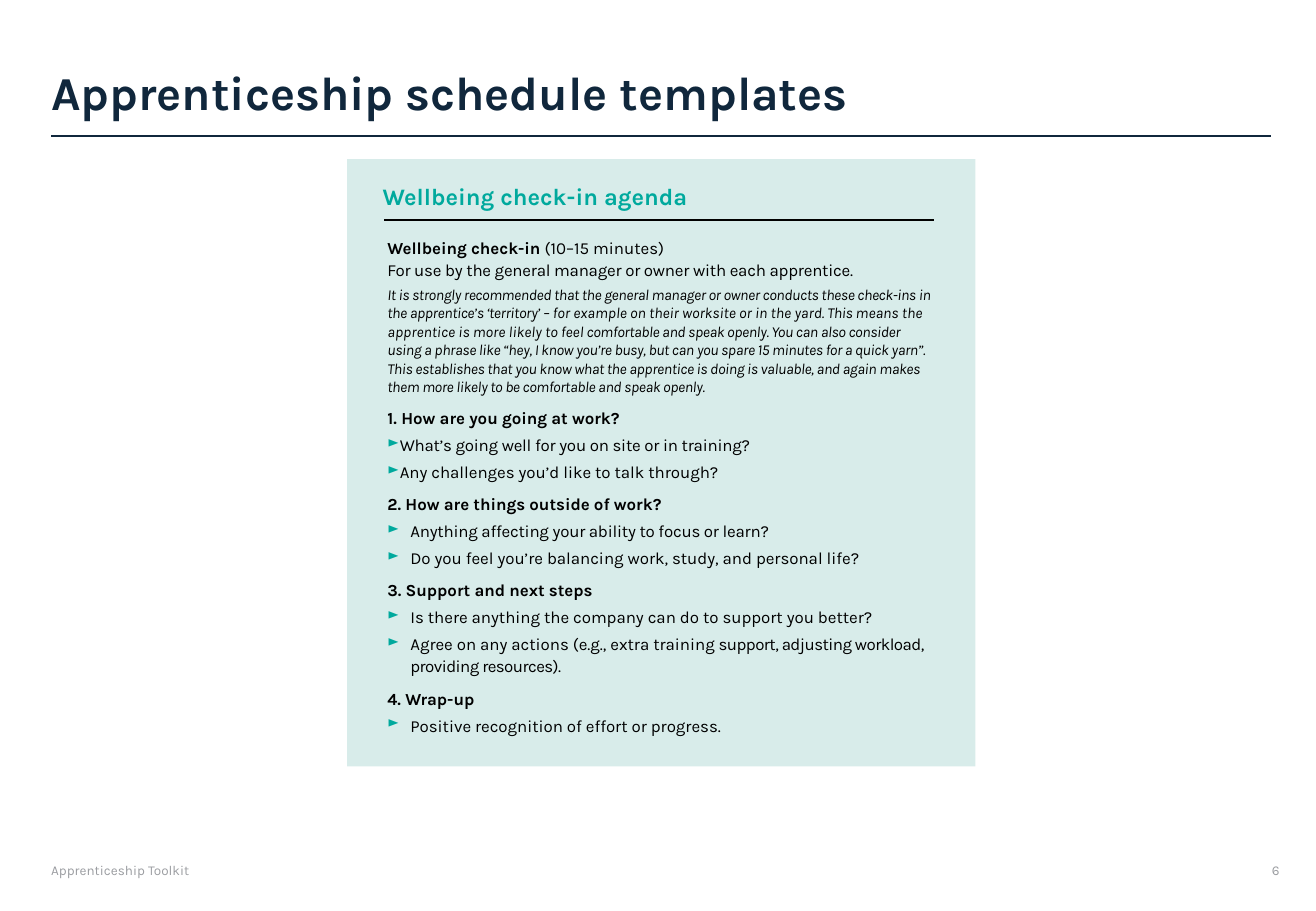
from lxml import etree
from pptx import Presentation
from pptx.dml.color import RGBColor
from pptx.enum import shapes
from pptx.oxml import ns
from pptx.util import Cm, Pt

NAVY = RGBColor(0x10, 0x27, 0x3C)
TEAL = RGBColor(0x00, 0xA9, 0x9D)
MINT = RGBColor(0xD8, 0xEC, 0xEA)
GREY = RGBColor(0x9B, 0x9D, 0xA1)
BLACK = RGBColor(0, 0, 0)

prs = Presentation()
prs.slide_width, prs.slide_height = Cm(27.51), Cm(19.05)
slide = prs.slides.add_slide(prs.slide_layouts[6])


def add_text(parent, box, paragraphs):
    """Each paragraph is (paragraph format, font format, colour, runs of (text, tracking))."""
    tf = parent.add_textbox(*map(Cm, box)).text_frame
    frame = dict(word_wrap=True, margin_left=0, margin_top=0, margin_right=0, margin_bottom=0)
    for name, value in frame.items():
        setattr(tf, name, value)
    for i, (para, font, colour, runs) in enumerate(paragraphs):
        p = tf.add_paragraph() if i else tf.paragraphs[0]
        for name, value in para.items():
            setattr(p, name, value)
        for words, tracking, *extra in runs:
            r = p.add_run()
            r.text = words
            for name, value in {"name": "Karla", **font, **dict(extra)}.items():
                setattr(r.font, name, value)
            r.font.color.rgb = colour
            if tracking:
                r.font._element.set("spc", str(tracking))
    return tf


def add_rule(parent, x1, x2, y, colour):
    ln = parent.add_connector(shapes.MSO_CONNECTOR.STRAIGHT, Cm(x1), Cm(y), Cm(x2), Cm(y))
    ln.line.color.rgb = colour
    ln.line.width = Pt(1)
    etree.SubElement(ln._element.spPr, ns.qn("a:effectLst"))


# Page frame: title, rule, footer and page number
add_rule(slide.shapes, 1.07, 26.57, 2.84, NAVY)
for box, words, size, bold, colour in [
    ((1.07, 18.03, 5.56, 0.46), "Apprenticeship Toolkit", 8, False, GREY),
    ((26.59, 18.03, 0.91, 0.28), "6", 8, False, GREY),
    ((1.07, 1.32, 25.53, 1.19), "Apprenticeship schedule templates", 28, True, NAVY),
]:
    add_text(slide.shapes, box, [({}, dict(size=Pt(size), bold=bold), colour, [(words, 0)])])

# Agenda panel
panel = slide.shapes.add_group_shape().shapes
sp = panel.add_shape(shapes.MSO_SHAPE.RECTANGLE, Cm(7.26), Cm(3.33), Cm(13.13), Cm(12.7))
sp.shadow.inherit = False
sp.fill.solid()
sp.fill.fore_color.rgb = MINT
sp.line.fill.background()
add_text(panel, (8, 3.81, 11.38, 0.61),
         [({}, dict(size=Pt(14), bold=True), TEAL, [("Wellbeing check-in agenda", 0)])])
add_rule(panel, 8.03, 19.53, 4.6, BLACK)

# Agenda wording: style, space after in points, runs of (text, tracking)
STYLES = {
    "head": (13, dict(size=Pt(10), bold=True)),
    "plain": (13, dict(size=Pt(10))),
    "note": (11, dict(size=Pt(9), italic=True)),
    "tight": (13, dict(size=Pt(10))),
    "bullet": (13, dict(size=Pt(10))),
}
HANGING = {"tight": 0, "bullet": 0.48}  # left margin of bulleted styles, in cm
agenda = [
    ("head", 0, [("Wellbeing check-in ", 0), ("(10–15 minutes)", 0, ("bold", False))]),
    ("plain", 3, [("For use by the general manager or owner with each apprentice.", -10)]),
    ("note", 6, [
        ("It is strongly recommended that the general manager or owner conducts these "
         "check-ins in the apprentice’s ‘territory’ ", -20),
        ("– for example on their worksite or in the yard. ", 0),
        ("This ", -20),
        ("means the apprentice is more likely to feel ", 0),
        ("comfortable and speak openly. You can also consider using a phrase like “hey, I know "
         "you’re busy, but can you spare 15 minutes for a quick yarn”. This establishes that you "
         "know what the apprentice is doing is valuable, and again makes them more likely to be "
         "comfortable and speak openly.", -20),
    ]),
    ("head", 3, [("1. How are you going at work?", 0)]),
    ("tight", 3, [("What’s going well for you on site or in training?", -10)]),
    ("tight", 6, [("Any challenges you’d like to talk through?", 0)]),
    ("head", 3, [("2. How are things outside of work?", 0)]),
    ("bullet", 3, [("Anything affecting your ability to focus or learn?", -10)]),
    ("bullet", 6, [("Do you feel you’re balancing work, study, and personal life?", 0)]),
    ("head", 3, [("3. Support and next steps", 0)]),
    ("bullet", 3, [("Is there anything the company can do to support you better?", 0)]),
    ("bullet", 6, [("Agree on any actions (e.g., extra training ", 0),
                   ("support, adjusting workload, providing resources).", -30)]),
    ("head", 3, [("4. Wrap-up", 0)]),
    ("bullet", 0, [("Positive recognition of effort or progress.", 0)]),
]
tf = add_text(panel, (8.1, 4.93, 11.38, 10.9), [
    (dict(line_spacing=Pt(STYLES[style][0]), space_after=Pt(after), level=int(style in HANGING)),
     STYLES[style][1], BLACK, runs)
    for style, after, runs in agenda])

# Teal arrow bullets
for p, (style, *_) in zip(tf.paragraphs, agenda):
    if style in HANGING:
        pPr = p._p.get_or_add_pPr()
        pPr.set("marL", str(Cm(HANGING[style])))
        pPr.set("indent", str(-Cm(0.48)))
        colour = etree.SubElement(pPr, ns.qn("a:buClr"))
        etree.SubElement(colour, ns.qn("a:srgbClr"), val=str(TEAL))
        etree.SubElement(pPr, ns.qn("a:buSzPct"), val="90000")
        etree.SubElement(pPr, ns.qn("a:buChar"), char="►")

prs.save("out.pptx")
